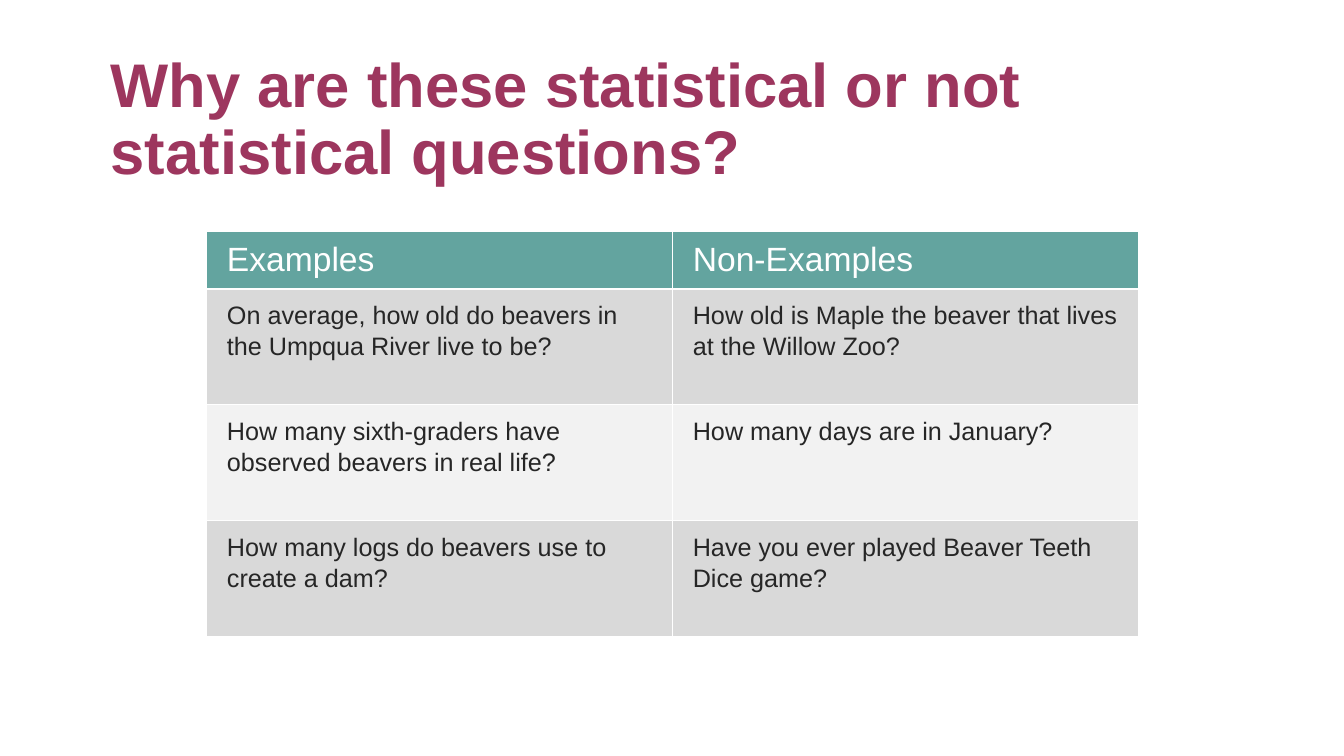
import dataclasses

import lxml.etree
import pptx
import pptx.dml.color
import pptx.enum.text
import pptx.oxml.ns
import pptx.table
import pptx.util

COLORS = {
    "title": "9D365E",
    "header": "63A49F",
    "header_text": "FFFFFF",
    "dark_band": "D9D9D9",
    "light_band": "F2F2F2",
    "body_text": "262626",
    "border": "FFFFFF",
}
FONT = "Arial"


@dataclasses.dataclass(frozen=True)
class RowStyle:
    fill: str
    text: str
    size: int
    height: float
    line_spacing: float


@dataclasses.dataclass(frozen=True)
class QuestionRow:
    example: str
    non_example: str
    style: RowStyle


HEADER = RowStyle("header", "header_text", 24, 1.46, 1.0)
DARK = RowStyle("dark_band", "body_text", 18, 2.92, 1.1)
LIGHT = dataclasses.replace(DARK, fill="light_band")

QUESTIONS = [
    QuestionRow("Examples", "Non-Examples", HEADER),
    QuestionRow("On average, how old do beavers in the Umpqua River live to be?",
                "How old is Maple the beaver that lives at the Willow Zoo?", DARK),
    QuestionRow("How many sixth-graders have observed beavers in real life?",
                "How many days are in January?", LIGHT),
    QuestionRow("How many logs do beavers use to create a dam?",
                "Have you ever played Beaver Teeth Dice game?", DARK),
]


def rgb(name: str) -> pptx.dml.color.RGBColor:
    return pptx.dml.color.RGBColor.from_string(COLORS[name])


def format_font(font, size: int, color: str, bold: bool = False) -> None:
    font.name = FONT
    font.size = pptx.util.Pt(size)
    font.bold = bold
    font.color.rgb = rgb(color)


def add_borders(cell: pptx.table._Cell) -> None:
    qn = pptx.oxml.ns.qn
    properties = cell._tc.get_or_add_tcPr()
    for side in "LRTB":
        line = lxml.etree.SubElement(properties, qn(f"a:ln{side}"),
                                     w=str(pptx.util.Pt(1)))
        fill = lxml.etree.SubElement(line, qn("a:solidFill"))
        lxml.etree.SubElement(fill, qn("a:srgbClr"), val=COLORS["border"])


def fill_cell(cell: pptx.table._Cell, text: str, style: RowStyle) -> None:
    add_borders(cell)
    cell.fill.solid()
    cell.fill.fore_color.rgb = rgb(style.fill)
    cell.margin_left = cell.margin_right = pptx.util.Cm(0.51)
    cell.margin_top = cell.margin_bottom = pptx.util.Cm(0.25)
    cell.text_frame.text = text
    paragraph = cell.text_frame.paragraphs[0]
    paragraph.line_spacing = style.line_spacing
    paragraph.space_before = paragraph.space_after = pptx.util.Pt(2)
    format_font(paragraph.runs[0].font, style.size, style.text)


def add_title(slide, text: str) -> None:
    title = slide.shapes.title
    title.left, title.top = pptx.util.Cm(2.79), pptx.util.Cm(1.37)
    title.width, title.height = pptx.util.Cm(28.32), pptx.util.Cm(3.58)
    frame = title.text_frame
    frame.text = text
    frame.word_wrap = True
    frame.auto_size = pptx.enum.text.MSO_AUTO_SIZE.NONE
    frame.vertical_anchor = pptx.enum.text.MSO_ANCHOR.TOP
    frame.margin_left = frame.margin_right = 0
    frame.margin_top = frame.margin_bottom = 0
    paragraph = frame.paragraphs[0]
    paragraph.alignment = pptx.enum.text.PP_ALIGN.LEFT
    paragraph.line_spacing = 0.9
    format_font(paragraph.runs[0].font, 44, "title", bold=True)


def add_question_table(slide, questions: list[QuestionRow]) -> None:
    height = sum(question.style.height for question in questions)
    table = slide.shapes.add_table(
        len(questions), 2, pptx.util.Cm(5.21), pptx.util.Cm(5.82),
        pptx.util.Cm(23.48), pptx.util.Cm(height)).table
    for row, question in zip(table.rows, questions):
        row.height = pptx.util.Cm(question.style.height)
        for cell, text in zip(row.cells, (question.example, question.non_example)):
            fill_cell(cell, text, question.style)


def main() -> None:
    presentation = pptx.Presentation()
    presentation.slide_width = pptx.util.Cm(33.87)
    presentation.slide_height = pptx.util.Cm(19.05)
    # Title-only layout
    slide = presentation.slides.add_slide(presentation.slide_layouts[5])
    # Heading
    add_title(slide, "Why are these statistical or not statistical questions?")
    # Examples beside non-examples
    add_question_table(slide, QUESTIONS)
    presentation.save("out.pptx")


if __name__ == "__main__":
    main()
